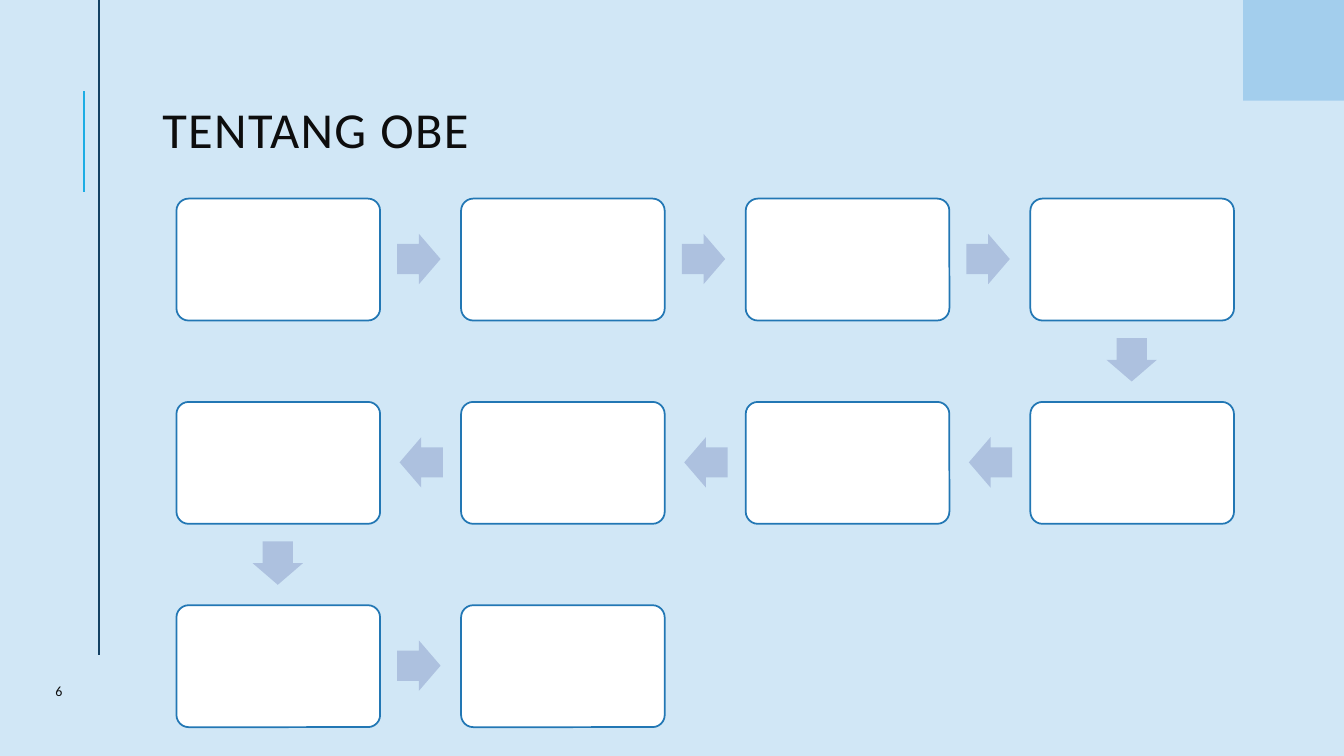
from pptx import Presentation
from pptx import util as u
from pptx.dml.color import RGBColor
from pptx.enum import shapes, text
from pptx.oxml.ns import qn
from lxml import etree

Inches = u.Inches
COLORS = {
    "background": "D1E7F6", "accent": "1CADE4", "rule": "134163",
    "corner": "A3CEED", "text": "0D0D0D", "box": "FFFFFF",
    "box_line": "2277B4", "arrow": "ADC1DF",
}


def write_text(frame, content, size, spacing=0, line_spacing=1.0, left_inset=0.1):
    frame.word_wrap = True
    frame.auto_size = text.MSO_AUTO_SIZE.NONE
    frame.vertical_anchor = text.MSO_ANCHOR.MIDDLE
    frame.margin_left = Inches(left_inset)
    paragraph = frame.paragraphs[0]
    paragraph.alignment = text.PP_ALIGN.LEFT
    paragraph.line_spacing = line_spacing
    run = paragraph.add_run()
    run.text = content
    run.font.name = "Calibri"
    run.font.size = u.Pt(size)
    run.font.color.rgb = RGBColor.from_string(COLORS["text"])
    if spacing:
        run._r.get_or_add_rPr().set("spc", str(spacing * 100))


def add_filled(kind, left, top, width, height, fill, line=None):
    shape = slide.shapes.add_shape(
        kind, Inches(left), Inches(top), Inches(width), Inches(height))
    shape.shadow.inherit = False
    shape.fill.solid()
    shape.fill.fore_color.rgb = RGBColor.from_string(COLORS[fill])
    if line:
        shape.line.color.rgb = RGBColor.from_string(COLORS[line])
        shape.line.width = u.Pt(1.25)
    else:
        shape.line.fill.background()
    return shape


presentation = Presentation()
presentation.slide_width = Inches(13.33)
presentation.slide_height = Inches(7.5)
slide = presentation.slides.add_slide(presentation.slide_layouts[5])
slide.background.fill.solid()
slide.background.fill.fore_color.rgb = RGBColor.from_string(COLORS["background"])

# Side rules and corner square
for x, start, end, color in [(0.83, 1.9, 0.9, "accent"), (0.98, 0, 6.5, "rule")]:
    side_rule = slide.shapes.add_connector(
        shapes.MSO_CONNECTOR.STRAIGHT, Inches(x), Inches(start), Inches(x), Inches(end))
    side_rule.line.color.rgb = RGBColor.from_string(COLORS[color])
    side_rule.line.width = u.Pt(1.5)
    etree.SubElement(side_rule._element.spPr, qn("a:effectLst"))
add_filled(shapes.MSO_SHAPE.RECTANGLE, 12.33, 0, 1, 1, "corner")

# Title and page number
title = slide.shapes.title
title.left, title.top = Inches(1.61), Inches(0.55)
title.width, title.height = Inches(10.01), Inches(1.56)
write_text(title.text_frame, "TENTANG OBE", size=36, spacing=1,
           line_spacing=0.8, left_inset=0)
page_number = slide.shapes.add_textbox(
    Inches(0.45), Inches(6.5), Inches(1.06), Inches(0.71))
write_text(page_number.text_frame, "6", size=10)

# Winding process: each row runs in the opposite direction to the one above
BOX_COUNT, COLUMNS = 10, 4
LEFT, TOP, COLUMN_STEP, ROW_STEP = 1.75, 1.97, 2.823, 2.017
BOX_WIDTH, BOX_HEIGHT = 2.02, 1.21
ARROW_WIDTH, ARROW_HEIGHT = 0.43, 0.5

for index in range(BOX_COUNT):
    row, position = divmod(index, COLUMNS)
    backwards = row % 2 == 1
    column = COLUMNS - 1 - position if backwards else position
    x, y = LEFT + column * COLUMN_STEP, TOP + row * ROW_STEP
    box = add_filled(shapes.MSO_SHAPE.ROUNDED_RECTANGLE, x, y,
                     BOX_WIDTH, BOX_HEIGHT, "box", "box_line")
    box.adjustments[0] = 0.1
    if index == BOX_COUNT - 1:
        break

    if position == COLUMNS - 1:
        rotation, arrow_x, arrow_y = 90, x + 0.79, y + 1.35
    elif backwards:
        rotation, arrow_x, arrow_y = 180, x - 0.61, y + 0.35
    else:
        rotation, arrow_x, arrow_y = 0, x + 2.19, y + 0.35
    arrow = add_filled(shapes.MSO_SHAPE.RIGHT_ARROW, arrow_x, arrow_y,
                       ARROW_WIDTH, ARROW_HEIGHT, "arrow")
    arrow.adjustments[0], arrow.adjustments[1] = 0.6, 0.5
    arrow.rotation = rotation

presentation.save("out.pptx")
